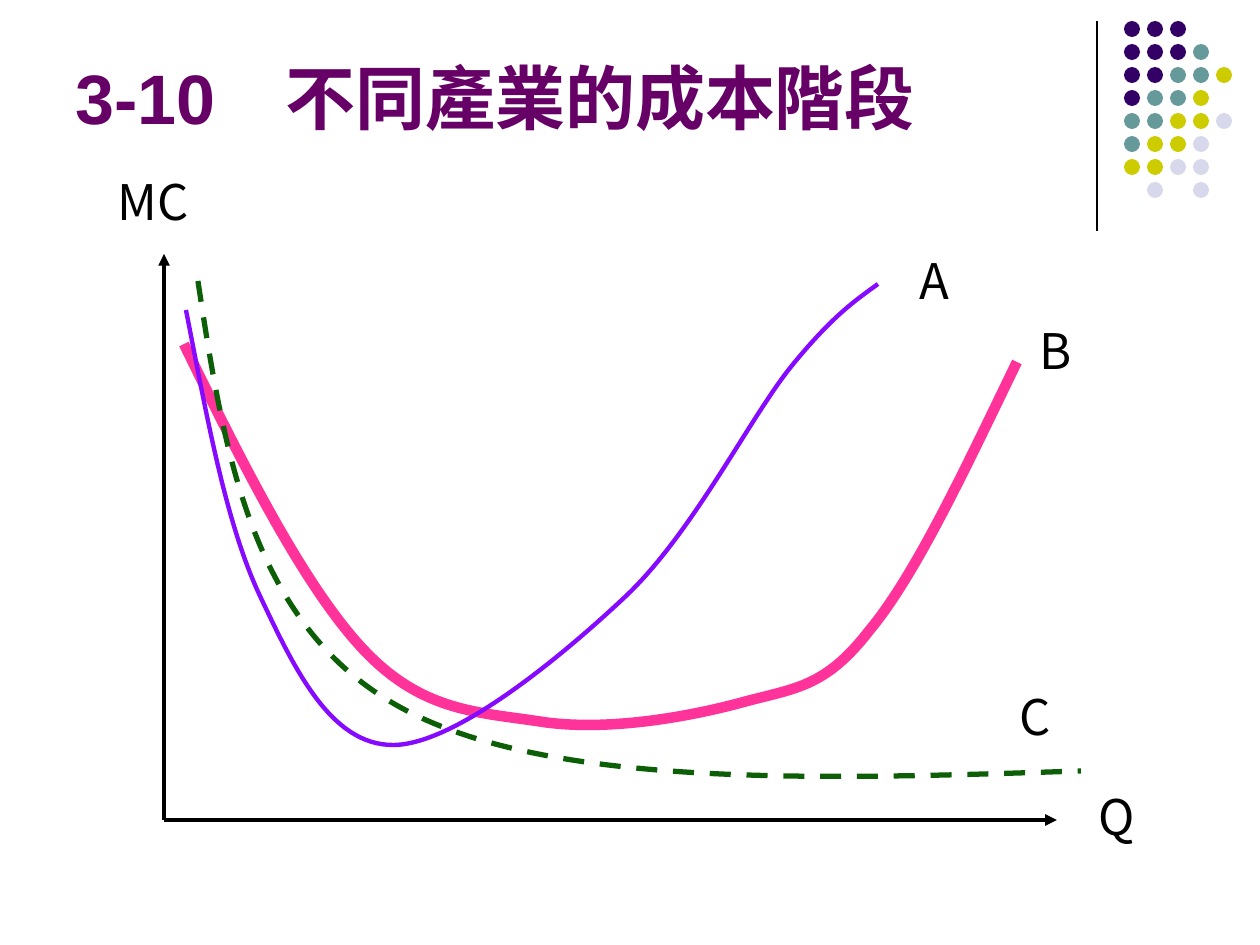
from lxml import etree
from pptx import Presentation
from pptx.dml.color import RGBColor
from pptx.enum.dml import MSO_LINE
from pptx.enum.shapes import MSO_CONNECTOR, MSO_SHAPE
from pptx.enum.text import MSO_ANCHOR, MSO_AUTO_SIZE, PP_ALIGN
from pptx.oxml.ns import qn
from pptx.util import Pt

SCALE = 914400 / 126  # EMU per px


def px(length):
    return round(length * SCALE)


def color(value):
    return RGBColor.from_string(value)


class CostSlide:
    title_font, label_font = "Arial", "Noto Sans CJK TC"
    title_color, ink = "660066", "000000"

    def __init__(self, deck):
        self.page = deck.slides.add_slide(deck.slide_layouts[5])  # title only
        self.shapes = self.page.shapes

    def place(self, shape, left, top, width, height):
        shape.left, shape.top = px(left), px(top)
        shape.width, shape.height = px(width), px(height)

    def set_text(self, frame, text, size, font, ink, bold=False):
        frame.text = text
        para = frame.paragraphs[0]
        para.alignment = PP_ALIGN.LEFT
        para.font.name, para.font.size, para.font.bold = font, Pt(size), bold
        para.font.color.rgb = color(ink)

    def title(self, text, *area):
        box = self.shapes.title
        self.place(box, *area)
        frame = box.text_frame
        frame.auto_size = MSO_AUTO_SIZE.NONE
        frame.vertical_anchor = MSO_ANCHOR.BOTTOM
        self.set_text(frame, text, 40, self.title_font, self.title_color, True)

    def label(self, text, left, top, width):
        box = self.shapes.add_textbox(px(left), px(top), px(width), px(72))
        box.text_frame.word_wrap = False
        self.set_text(box.text_frame, text, 28, self.label_font, self.ink)

    def line(self, start, end, weight, arrow=False):
        line = self.shapes.add_connector(
            MSO_CONNECTOR.STRAIGHT, *map(px, start + end))
        line.line.color.rgb = color(self.ink)
        line.line.width = Pt(weight)
        if arrow:
            etree.SubElement(line.line._get_or_add_ln(), qn("a:tailEnd"),
                             type="triangle")
        etree.SubElement(line._element.spPr, qn("a:effectLst"))

    def dot(self, left, top, size, fill):
        dot = self.shapes.add_shape(MSO_SHAPE.OVAL, px(left), px(top), px(size), px(size))
        dot.shadow.inherit = False
        dot.fill.solid()
        dot.fill.fore_color.rgb = color(fill)
        dot.line.fill.background()

    def curve(self, points, ink, weight, dash=None):
        """Draw a start point followed by Bezier triples."""
        builder = self.shapes.build_freeform(*points[0], scale=SCALE)
        builder.add_line_segments(points[1:], close=False)
        shape = builder.convert_to_shape()
        # Merge every three line segments into one cubic segment
        segments = list(shape._element.iter(qn("a:lnTo")))
        for first, second, third in zip(*[iter(segments)] * 3):
            first.tag = qn("a:cubicBezTo")
            for extra in (second, third):
                first.append(extra[0])
                extra.getparent().remove(extra)
        shape.shadow.inherit = False
        shape.fill.background()
        shape.line.color.rgb = color(ink)
        shape.line.width = Pt(weight)
        if dash:
            shape.line.dash_style = dash


def main():
    deck = Presentation()
    deck.slide_width, deck.slide_height = px(1260), px(945)
    slide = CostSlide(deck)

    # Corner ornament: rule and dot grid
    slide.line((1097, 21), (1097, 231), 0.75)
    fills = {"P": "330066", "T": "669999", "Y": "CCCC00", "L": "D8D8EC"}
    rows = ["PPP", "PPPT", "PPTTY", "PTTY", "TTYYL", "TYYL", "YYLL", ".L.L"]
    for row, codes in enumerate(rows):
        for column, code in enumerate(codes):
            if code in fills:
                slide.dot(1124 + 23 * column, 21 + 23 * row, 16, fills[code])

    slide.title("3-10　不同產業的成本階段", 63, 16, 1013, 129)

    # Axes
    origin = (164, 820)
    slide.line(origin, (164, 254), 2.25, arrow=True)
    slide.line(origin, (1057, 820), 2.25, arrow=True)

    # Marginal cost curves B, A and C
    slide.curve([(184, 344), (243, 465), (304, 586), (363, 649),
                 (423, 713), (480, 712), (543, 722),
                 (606, 731), (684, 718), (740, 703),
                 (794, 688), (824, 689), (869, 631),
                 (916, 575), (966, 467), (1017, 362)], "FF3399", 6)
    slide.curve([(186, 310), (207, 417), (226, 525), (261, 598),
                 (295, 670), (331, 745), (393, 745),
                 (454, 745), (559, 659), (625, 597),
                 (692, 534), (748, 421), (790, 368),
                 (832, 316), (856, 300), (878, 284)], "850AFF", 2.5)
    slide.curve([(198, 281), (224, 452), (251, 624), (398, 706),
                 (544, 788), (813, 780), (1081, 771)],
                "0D5F07", 3, MSO_LINE.DASH)

    # Axis and curve labels
    for text, left, top, width in [
            ("MC", 105, 165, 97), ("Q", 1086, 780, 63), ("A", 907, 244, 59),
            ("B", 1027, 314, 57), ("C", 1007, 680, 57)]:
        slide.label(text, left, top, width)

    deck.save("out.pptx")


if __name__ == "__main__":
    main()
